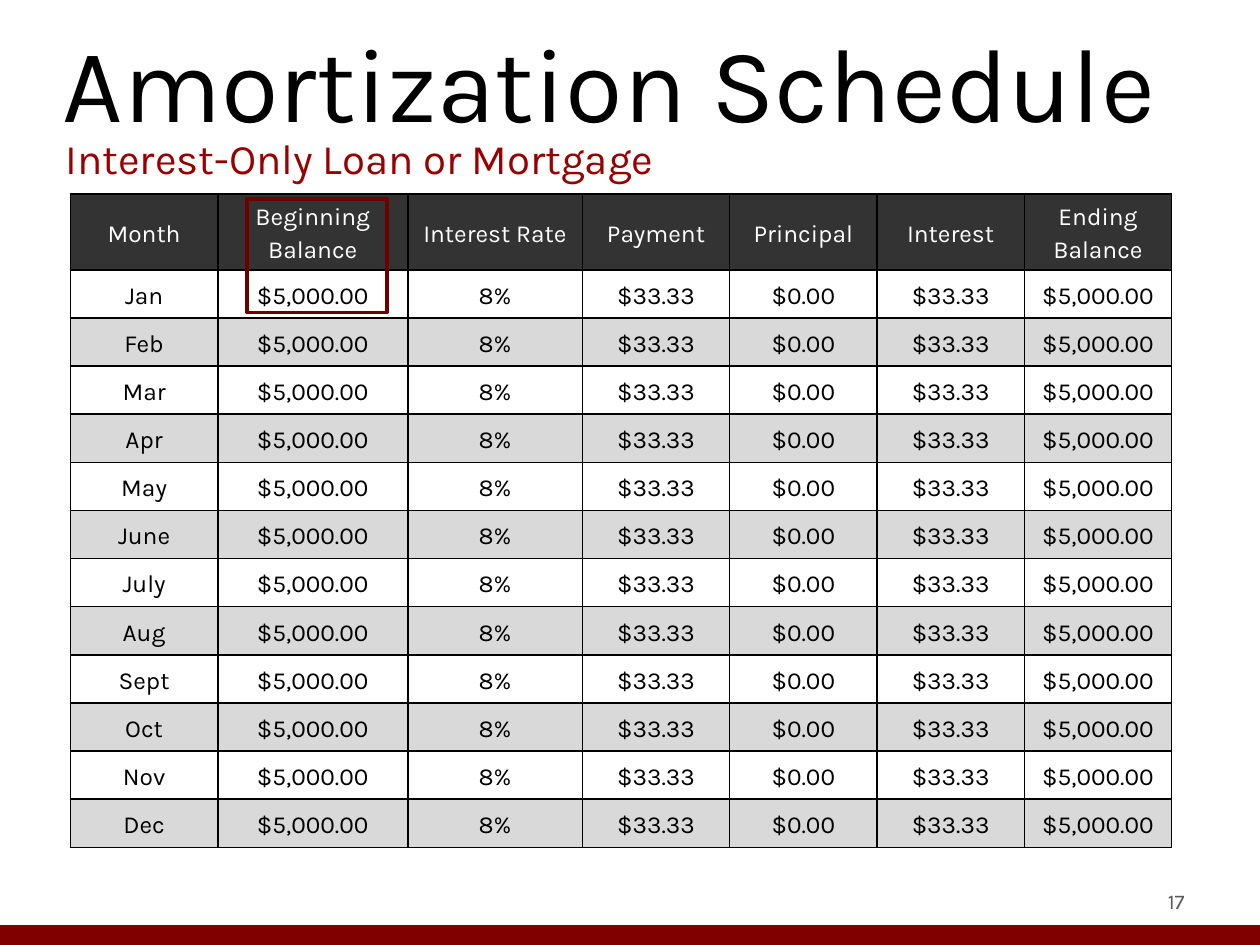
from dataclasses import dataclass

from lxml.etree import SubElement
from pptx import Presentation
from pptx.dml.color import RGBColor
from pptx.enum.shapes import MSO_CONNECTOR as Connector, MSO_SHAPE as Shape
from pptx.enum.text import MSO_ANCHOR as Anchor, PP_ALIGN as Align
from pptx.oxml.ns import qn
from pptx.util import Cm, Pt

FONT = "Karla"
BLACK = RGBColor(0x00, 0x00, 0x00)
WHITE = RGBColor(0xFF, 0xFF, 0xFF)
CHARCOAL = RGBColor(0x33, 0x33, 0x33)
BAND_GRAY = RGBColor(0xD9, 0xD9, 0xD9)
NUMBER_GRAY = RGBColor(0x59, 0x59, 0x59)
SUBTITLE_RED = RGBColor(0x99, 0x00, 0x00)
FOOTER_RED = RGBColor(0x80, 0x00, 0x00)
MARKER_RED = RGBColor(0x6F, 0x00, 0x00)

PAGE_WIDTH, PAGE_HEIGHT = Cm(25.4), Cm(19.05)
HEADER_HEIGHT, MONTH_HEIGHT = Cm(1.53), Cm(0.97)
MONTHS = ["Jan", "Feb", "Mar", "Apr", "May", "June",
          "July", "Aug", "Sept", "Oct", "Nov", "Dec"]


@dataclass(frozen=True)
class Column:
    heading: str
    width: float
    value: str = ""


@dataclass(frozen=True)
class Label:
    text: str
    left: float
    top: float
    width: float
    height: float
    size: int
    color: RGBColor
    align: Align = Align.LEFT
    anchor: Anchor = Anchor.TOP
    spacing: float = 1.0


COLUMNS = [
    Column("Month", 2.97),
    Column("Beginning Balance", 3.83, "$5,000.00"),
    Column("Interest Rate", 3.52, "8%"),
    Column("Payment", 2.97, "$33.33"),
    Column("Principal", 2.97, "$0.00"),
    Column("Interest", 2.97, "$33.33"),
    Column("Ending Balance", 2.97, "$5,000.00"),
]

LABELS = [
    Label("Amortization Schedule", 1.27, 0.36, 24.13, 3.94, 60, BLACK),
    Label("Interest-Only Loan or Mortgage", 1.32, 2.08, 23.27, 1.32, 24,
          SUBTITLE_RED, spacing=1.58),
    Label("17", 22.83, 17.65, 1.05, 1.02, 12, NUMBER_GRAY,
          align=Align.RIGHT, anchor=Anchor.MIDDLE),
]


def write_text(frame, text: str, *, size: int, color: RGBColor,
               align: Align = Align.LEFT, spacing: float = 1.0) -> None:
    para = frame.paragraphs[0]
    para.alignment = align
    para.line_spacing = spacing
    span = para.add_run()
    span.text = text
    span.font.name = FONT
    span.font.size = Pt(size)
    span.font.color.rgb = color


def add_label(page, label: Label) -> None:
    box = page.shapes.add_textbox(Cm(label.left), Cm(label.top),
                                  Cm(label.width), Cm(label.height))
    frame = box.text_frame
    frame.word_wrap = True
    frame.vertical_anchor = label.anchor
    frame.margin_left = frame.margin_right = 0
    frame.margin_top = frame.margin_bottom = 0
    write_text(frame, label.text, size=label.size, color=label.color,
               align=label.align, spacing=label.spacing)


def add_borders(cell) -> None:
    properties = cell._tc.get_or_add_tcPr()
    for side in ("a:lnL", "a:lnR", "a:lnT", "a:lnB"):
        line = SubElement(properties, qn(side), w=str(Pt(1)))
        fill = SubElement(line, qn("a:solidFill"))
        SubElement(fill, qn("a:srgbClr"), val=str(BLACK))


def fill_cell(cell, text: str, fill: RGBColor, color: RGBColor) -> None:
    add_borders(cell)
    cell.fill.solid()
    cell.fill.fore_color.rgb = fill
    cell.vertical_anchor = Anchor.MIDDLE
    cell.margin_left = cell.margin_right = Cm(0.18)
    cell.margin_top = cell.margin_bottom = 0
    write_text(cell.text_frame, text, size=14, color=color,
               align=Align.CENTER, spacing=1.15)


def add_schedule(page) -> None:
    width = sum(Cm(column.width) for column in COLUMNS)
    height = HEADER_HEIGHT + len(MONTHS) * MONTH_HEIGHT
    table = page.shapes.add_table(len(MONTHS) + 1, len(COLUMNS), Cm(1.42),
                                  Cm(3.91), width, height).table
    table.first_row = table.horz_banding = False
    table.rows[0].height = HEADER_HEIGHT
    for index, column in enumerate(COLUMNS):
        table.columns[index].width = Cm(column.width)
        fill_cell(table.cell(0, index), column.heading, CHARCOAL, WHITE)
    for row, month in enumerate(MONTHS, start=1):
        table.rows[row].height = MONTH_HEIGHT
        band = WHITE if row % 2 else BAND_GRAY
        for index, column in enumerate(COLUMNS):
            fill_cell(table.cell(row, index), column.value or month, band, BLACK)


def add_footer_bar(page) -> None:
    bar = page.shapes.add_connector(Connector.STRAIGHT, 0, Cm(18.85),
                                    PAGE_WIDTH, Cm(18.85))
    bar.line.color.rgb = FOOTER_RED
    bar.line.width = Pt(12)
    SubElement(bar._element.spPr, qn("a:effectLst"))


def add_balance_marker(page) -> None:
    marker = page.shapes.add_shape(Shape.RECTANGLE, Cm(4.98), Cm(4.01),
                                   Cm(2.82), Cm(2.29))
    marker.shadow.inherit = False
    marker.fill.background()
    marker.line.color.rgb = MARKER_RED
    marker.line.width = Pt(2)


def main() -> None:
    deck = Presentation()
    deck.slide_width, deck.slide_height = PAGE_WIDTH, PAGE_HEIGHT
    page = deck.slides.add_slide(deck.slide_layouts[6])
    add_footer_bar(page)
    for label in LABELS:
        add_label(page, label)
    add_schedule(page)
    add_balance_marker(page)
    deck.save("out.pptx")


if __name__ == "__main__":
    main()
